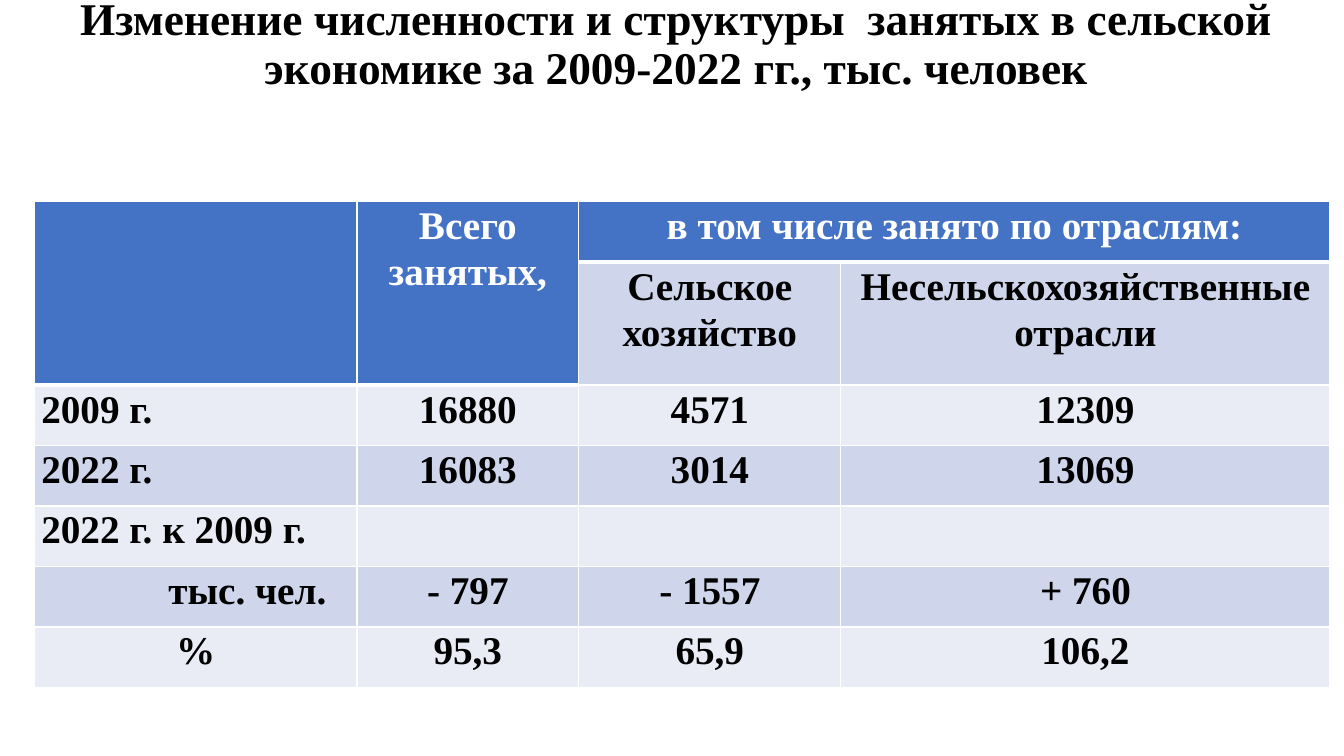
from lxml.etree import SubElement
from pptx import Presentation
from pptx.dml.color import RGBColor
from pptx.enum.text import MSO_ANCHOR, MSO_AUTO_SIZE, PP_ALIGN
from pptx.oxml.ns import qn
from pptx.util import Inches, Pt

# Content: None marks a cell covered by a merged neighbour
TITLE = ("Изменение численности и структуры  занятых в сельской "
         "экономике за 2009-2022 гг., тыс. человек")
EMPLOYMENT = [
    ["", "Всего занятых,", "в том числе занято по отраслям:", None],
    [None, None, "Сельское хозяйство", "Несельскохозяйственные отрасли"],
    ["2009 г.", "16880", "4571", "12309"],
    ["2022 г.", "16083", "3014", "13069"],
    ["2022 г. к 2009 г.", "", "", ""],
    ["тыс. чел.", "- 797", "- 1557", "+ 760"],
    ["%", "95,3", "65,9", "106,2"],
]
MERGES = [((0, 0), (1, 0)), ((0, 1), (1, 1)), ((0, 2), (0, 3))]
LEFT_LABEL_ROWS = (2, 3, 4, 5)
INDENTED_ROW, LABEL_INDENT = 5, 1.26

# Layout
SLIDE_W, SLIDE_H = 13.33, 7.5
LEFT, TABLE_TOP = 0.34, 2
COLUMN_WIDTHS = [3.2, 2.2, 2.6, 4.85]
ROW_HEIGHTS = [0.6, 1.22] + [0.6] * 5
CELL_MARGIN = 0.07
COLORS = {"header": "4472C4", "dark_band": "CFD5EA", "light_band": "E9EBF5",
          "white": "FFFFFF", "black": "000000"}


def write(frame, text, size, color="black", align=PP_ALIGN.CENTER,
          line_spacing=1.07, space_after=8):
    paragraph = frame.paragraphs[0]
    paragraph.alignment = align
    paragraph.line_spacing = line_spacing
    paragraph.space_after = Pt(space_after)
    run = paragraph.add_run()
    run.text = text
    run.font.name = "Times New Roman"
    run.font.size = Pt(size)
    run.font.bold = True
    run.font.color.rgb = RGBColor.from_string(COLORS[color])


def add_borders(cell, bottom):
    properties = cell._tc.get_or_add_tcPr()
    for side, weight in (("L", 1), ("R", 1), ("T", 1), ("B", bottom)):
        line = SubElement(properties, qn(f"a:ln{side}"), w=str(Pt(weight)))
        fill = SubElement(line, qn("a:solidFill"))
        SubElement(fill, qn("a:srgbClr"), val=COLORS["white"])


def format_cell(cell, row, column, text):
    is_header = row == 0 or (row == 1 and column < 2)
    add_borders(cell, bottom=3 if is_header else 1)
    band = "dark_band" if row % 2 else "light_band"
    cell.fill.solid()
    cell.fill.fore_color.rgb = RGBColor.from_string(
        COLORS["header" if is_header else band])
    cell.margin_left = cell.margin_right = Inches(CELL_MARGIN)
    cell.margin_top = cell.margin_bottom = 0
    if not text:
        return
    is_left = column == 0 and row in LEFT_LABEL_ROWS
    if is_left and row == INDENTED_ROW:
        cell.margin_left = Inches(CELL_MARGIN + LABEL_INDENT)
    write(cell.text_frame, text, 28,
          color="white" if is_header else "black",
          align=PP_ALIGN.LEFT if is_left else PP_ALIGN.CENTER)


def main():
    deck = Presentation()
    deck.slide_width, deck.slide_height = Inches(SLIDE_W), Inches(SLIDE_H)
    slide = deck.slides.add_slide(deck.slide_layouts[5])

    # Title
    title = slide.shapes.title
    title.left, title.top = Inches(LEFT), 0
    title.width, title.height = Inches(12.73), Inches(0.9)
    title.text_frame.word_wrap = True
    title.text_frame.auto_size = MSO_AUTO_SIZE.NONE
    title.text_frame.vertical_anchor = MSO_ANCHOR.MIDDLE
    write(title.text_frame, TITLE, 32.4, line_spacing=0.9, space_after=0)

    # Employment table
    table = slide.shapes.add_table(
        len(ROW_HEIGHTS), len(COLUMN_WIDTHS), Inches(LEFT), Inches(TABLE_TOP),
        Inches(sum(COLUMN_WIDTHS)), Inches(sum(ROW_HEIGHTS))).table
    table.first_row = table.horz_banding = False
    for column, width in zip(table.columns, COLUMN_WIDTHS):
        column.width = Inches(width)
    for row, height in zip(table.rows, ROW_HEIGHTS):
        row.height = Inches(height)
    for start, end in MERGES:
        table.cell(*start).merge(table.cell(*end))
    for row, texts in enumerate(EMPLOYMENT):
        for column, text in enumerate(texts):
            format_cell(table.cell(row, column), row, column, text)

    deck.save("out.pptx")


if __name__ == "__main__":
    main()
